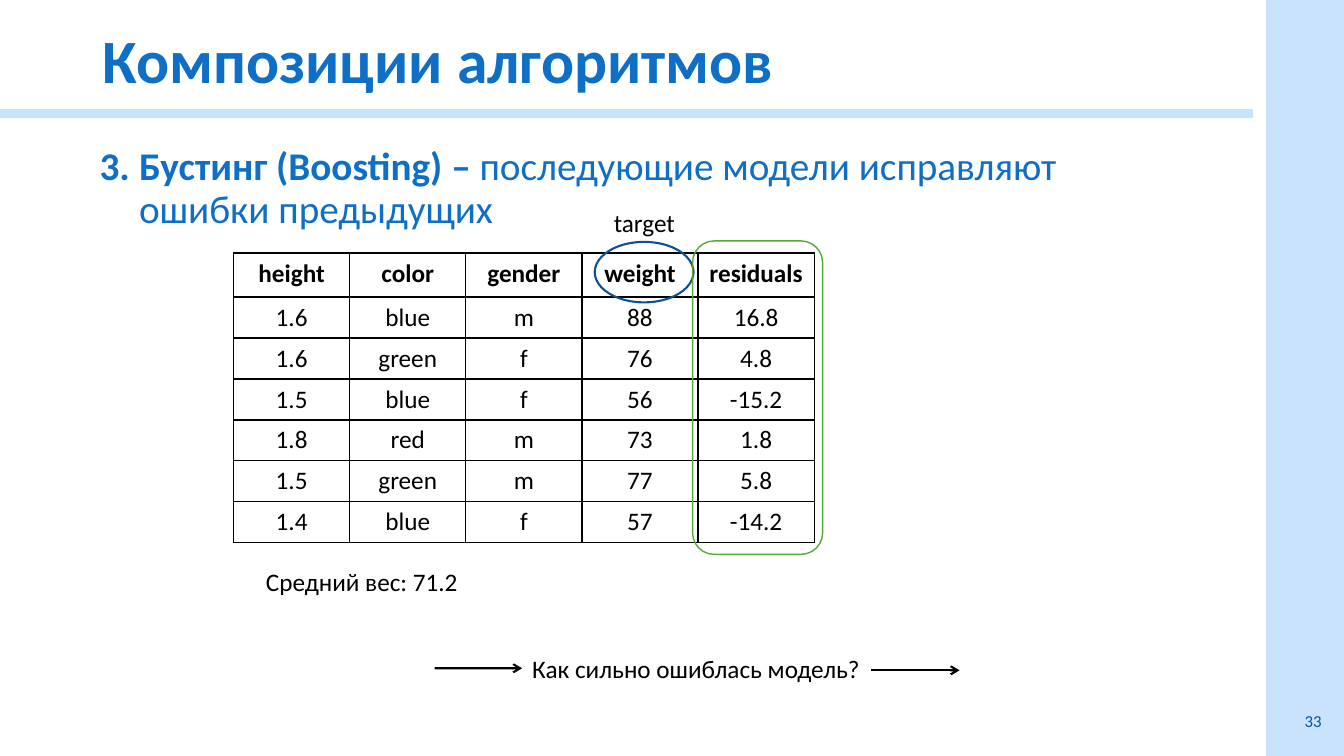
from dataclasses import dataclass

from lxml import etree
from pptx import Presentation
from pptx import util as u
from pptx.dml.color import RGBColor
from pptx.enum import shapes, text
from pptx.oxml import ns


@dataclass(frozen=True)
class Theme:
    font: str = "Calibri"
    accent: str = "0F6FC6"
    deep: str = "0B5294"
    band: str = "C8E3FB"
    green: str = "55A839"
    ink: str = "000000"
    title: int = 44
    body: int = 28
    label: int = 18
    number: int = 12


def add_xml(parent, tag, **attributes):
    return etree.SubElement(parent, ns.qn(tag), attributes)


class SlideBuilder:
    """Draws on one slide; all lengths are percentages of its width and height."""

    def __init__(self, deck, theme):
        self.deck, self.theme = deck, theme
        self.slide = deck.slides.add_slide(deck.slide_layouts[6])

    def x(self, share):
        return round(self.deck.slide_width * share / 100)

    def y(self, share):
        return round(self.deck.slide_height * share / 100)

    def box(self, left, top, width, height):
        return self.x(left), self.y(top), self.x(width), self.y(height)

    def run(self, paragraph, words, size, color, bold=False):
        run = paragraph.add_run()
        run.text = words
        run.font.name = self.theme.font
        run.font.size = u.Pt(size)
        run.font.bold = bold
        run.font.color.rgb = RGBColor.from_string(color)

    def text(self, place, runs, size, color, anchor=text.MSO_ANCHOR.TOP,
             align=text.PP_ALIGN.LEFT, spacing=1.0, hanging=0):
        """Add wrapped text; runs are (words, bold) pairs."""
        holder = self.slide.shapes.add_textbox(*self.box(*place))
        frame = holder.text_frame
        frame.word_wrap = True
        frame.vertical_anchor = anchor
        paragraph = frame.paragraphs[0]
        paragraph.alignment = align
        paragraph.line_spacing = spacing
        if hanging:
            properties = paragraph._p.get_or_add_pPr()
            properties.set("marL", str(self.x(hanging)))
            properties.set("indent", str(-self.x(hanging)))
        for words, bold in runs:
            self.run(paragraph, words, size, color, bold)
        return holder

    def label(self, place, words):
        holder = self.text(place, [(words, False)], self.theme.label, self.theme.ink)
        holder.text_frame.word_wrap = False
        holder.text_frame.auto_size = text.MSO_AUTO_SIZE.SHAPE_TO_FIT_TEXT
        return holder

    def shape(self, kind, place):
        shape = self.slide.shapes.add_shape(kind, *self.box(*place))
        shape.shadow.inherit = False
        return shape

    def bar(self, place):
        bar = self.shape(shapes.MSO_SHAPE.RECTANGLE, place)
        bar.fill.solid()
        bar.fill.fore_color.rgb = RGBColor.from_string(self.theme.band)
        bar.line.fill.background()

    def outline(self, kind, place, color, weight):
        ring = self.shape(kind, place)
        ring.fill.background()
        ring.line.color.rgb = RGBColor.from_string(color)
        ring.line.width = u.Pt(weight)

    def arrow(self, left, right, level):
        arrow = self.slide.shapes.add_connector(
            shapes.MSO_CONNECTOR.STRAIGHT,
            self.x(left), self.y(level), self.x(right), self.y(level))
        arrow.line.color.rgb = RGBColor.from_string(self.theme.ink)
        arrow.line.width = u.Pt(1.5)
        add_xml(arrow.line._get_or_add_ln(), "a:tailEnd", type="arrow")
        add_xml(arrow._element.spPr, "a:effectLst")
        return arrow

    def borders(self, cell):
        properties = cell._tc.get_or_add_tcPr()
        for side in ("a:lnL", "a:lnR", "a:lnT", "a:lnB"):
            line = add_xml(properties, side, w=str(u.Pt(1)))
            add_xml(add_xml(line, "a:solidFill"), "a:srgbClr", val=self.theme.ink)

    def table(self, left, top, column_width, header_height, row_height, rows):
        place = self.box(left, top, column_width * len(rows[0]),
                         header_height + row_height * (len(rows) - 1))
        table = self.slide.shapes.add_table(len(rows), len(rows[0]), *place).table
        table.first_row = table.horz_banding = False
        for column in table.columns:
            column.width = self.x(column_width)
        for r, values in enumerate(rows):
            table.rows[r].height = self.y(row_height if r else header_height)
            for c, value in enumerate(values):
                cell = table.cell(r, c)
                self.borders(cell)
                cell.fill.background()
                paragraph = cell.text_frame.paragraphs[0]
                paragraph.alignment = text.PP_ALIGN.CENTER
                self.run(paragraph, value, self.theme.label, self.theme.ink, bold=r == 0)


PEOPLE = [
    ("height", "color", "gender", "weight", "residuals"),
    ("1.6", "blue", "m", "88", "16.8"),
    ("1.6", "green", "f", "76", "4.8"),
    ("1.5", "blue", "f", "56", "-15.2"),
    ("1.8", "red", "m", "73", "1.8"),
    ("1.5", "green", "m", "77", "5.8"),
    ("1.4", "blue", "f", "57", "-14.2"),
]


def main():
    deck = Presentation()
    deck.slide_width, deck.slide_height = u.Inches(13.33), u.Inches(7.5)
    theme = Theme()
    page = SlideBuilder(deck, theme)

    page.bar((94.2, 0, 5.8, 100))
    page.bar((0, 14.44, 93.22, 1.2))
    page.text((6.9, 1.73, 86.25, 13.33), [("Композиции алгоритмов", True)],
              theme.title, theme.accent, anchor=text.MSO_ANCHOR.MIDDLE, spacing=0.9)
    page.text((76.58, 92.67, 22.5, 5.33), [("33", False)], theme.number, theme.deep,
              anchor=text.MSO_ANCHOR.MIDDLE, align=text.PP_ALIGN.RIGHT)
    page.text((6.68, 18.8, 81.38, 33.2),
              [("3.\tБустинг (Boosting) – ", True),
               ("последующие модели исправляют ошибки предыдущих", False)],
              theme.body, theme.accent, spacing=0.9, hanging=2.93)

    page.table(17.38, 33.47, 8.64, 5.83, 5.42, PEOPLE)
    page.label((19.05, 74.27, 15.98, 5.33), "Средний вес: 71.2")
    page.outline(shapes.MSO_SHAPE.OVAL, (44.25, 32, 7.35, 8), theme.deep, 1.5)
    page.label((44.93, 26.8, 6.08, 5.33), "target")

    question = page.label((38.85, 85.73, 26.18, 5.33), "Как сильно ошиблась модель?")
    page.arrow(32.33, 38.85, 88.4).end_connect(question, 1)
    page.arrow(64.82, 71.4, 88.67)
    page.outline(shapes.MSO_SHAPE.ROUNDED_RECTANGLE, (51.53, 31.87, 9.68, 41.47),
                 theme.green, 1)

    deck.save("out.pptx")


if __name__ == "__main__":
    main()
